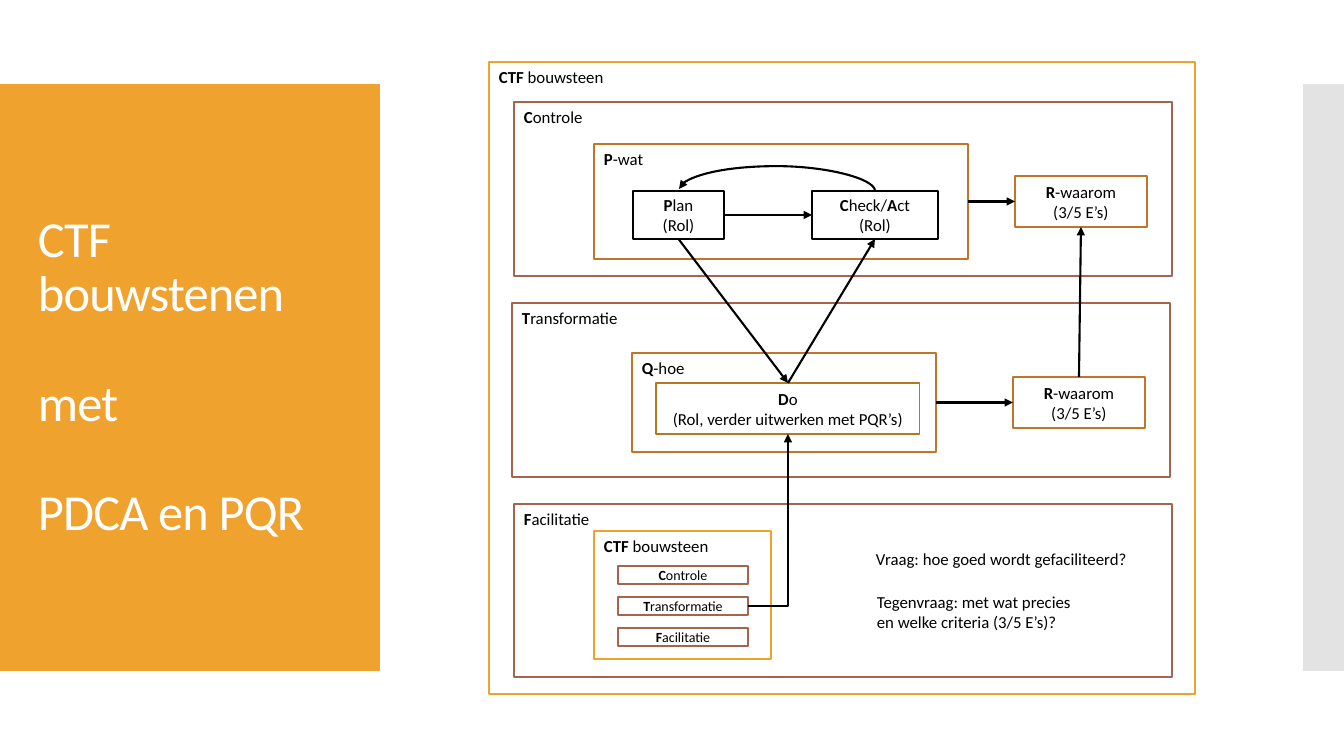
import pptx
import pptx.dml.color
import pptx.enum.shapes
import pptx.enum.text
import pptx.oxml
import pptx.oxml.ns
import pptx.util

PX = 914400 / 100.8
FONT = "Calibri"
COLORS = {
    "amber": "F0A22E", "copper": "C17529", "ochre": "B27822", "brick": "A5644E",
    "grey": "C8C8C8", "black": "000000", "white": "FFFFFF",
}
ALIGN = pptx.enum.text.PP_ALIGN
ANCHOR = pptx.enum.text.MSO_ANCHOR
CONNECTOR = pptx.enum.shapes.MSO_CONNECTOR
TOP, LEFT, BOTTOM, RIGHT = range(4)


def emu(*lengths):
    return [pptx.util.Emu(round(length * PX)) for length in lengths]


def color(name):
    return pptx.dml.color.RGBColor.from_string(COLORS[name])


def add_xml(parent, tag, **attributes):
    child = pptx.oxml.parse_xml(f"<a:{tag} {pptx.oxml.ns.nsdecls('a')}/>")
    for name, value in attributes.items():
        child.set(name, value)
    parent.append(child)


def write_text(shape, text, size=12, ink="black", align=ALIGN.LEFT, anchor=ANCHOR.TOP,
               line_spacing=None, gap=0, tracking=None):
    """Write one paragraph per line; parts between asterisks are bold."""
    frame = shape.text_frame
    frame.word_wrap = True
    frame.vertical_anchor = anchor
    for number, line in enumerate(text.split("\n")):
        para = frame.add_paragraph() if number else frame.paragraphs[0]
        para.alignment = align
        para.line_spacing = line_spacing
        para.space_before = pptx.util.Pt(gap if number else 0)
        for index, part in enumerate(line.split("*")):
            if not part:
                continue
            span = para.add_run()
            span.text = part
            span.font.name = FONT
            span.font.size = pptx.util.Pt(size)
            span.font.bold = index % 2 == 1
            span.font.color.rgb = color(ink)
            if tracking:
                span.font._element.set("spc", str(tracking))


def add_panel(page, box, fill):
    panel = page.shapes.add_shape(pptx.enum.shapes.MSO_SHAPE.RECTANGLE, *emu(*box))
    panel.shadow.inherit = False
    panel.fill.solid()
    panel.fill.fore_color.rgb = color(fill)
    panel.line.fill.background()
    return panel


def add_frame(page, box, text, line, weight=1.5, **text_format):
    frame = page.shapes.add_shape(pptx.enum.shapes.MSO_SHAPE.RECTANGLE, *emu(*box))
    frame.shadow.inherit = False
    frame.fill.background()
    frame.line.color.rgb = color(line)
    frame.line.width = pptx.util.Pt(weight)
    write_text(frame, text, **text_format)
    return frame


def add_step(page, box, text, line, **options):
    return add_frame(page, box, text, line, align=ALIGN.CENTER, anchor=ANCHOR.MIDDLE, **options)


def add_note(page, box, text, **text_format):
    note = page.shapes.add_textbox(*emu(*box))
    write_text(note, text, **text_format)


def add_arrow(page, kind=CONNECTOR.STRAIGHT, ends=(0, 0, 0, 0)):
    arrow = page.shapes.add_connector(kind, *emu(*ends))
    arrow.line.color.rgb = color("black")
    arrow.line.width = pptx.util.Pt(1.5)
    add_xml(arrow.line._get_or_add_ln(), "tailEnd", type="triangle")
    add_xml(arrow._element.spPr, "effectLst")
    return arrow


def join(page, start, start_side, end, end_side, kind=CONNECTOR.STRAIGHT):
    arrow = add_arrow(page, kind)
    arrow.begin_connect(start, start_side)
    arrow.end_connect(end, end_side)
    return arrow


def add_return_arc(page, center, middle, span, rise):
    """Draw an arrow arching from right to left, as a curve turned by 270 degrees."""
    half = span / 2
    arc = add_arrow(page, CONNECTOR.CURVE, (center - 1, middle + half, center + 1, middle - half))
    properties = arc._element.spPr
    properties.find(pptx.oxml.ns.qn("a:xfrm")).set("rot", str(270 * 60000))
    guides = properties.find(pptx.oxml.ns.qn("a:prstGeom")).get_or_add_avLst()
    add_xml(guides, "gd", name="adj1", fmla=f"val {(rise + 1) * 50000}")


def add_side_panels(page, box):
    left, top, width, height = box
    add_panel(page, (left, top, 380, height), "amber")
    strip = add_panel(page, (left + width - 41, top, 41, height), "grey")
    fill = strip._element.spPr.find(pptx.oxml.ns.qn("a:solidFill"))
    add_xml(fill[0], "alpha", val="50000")
    add_note(page, (left + 28, top + 40, 325, 507), "CTF bouwstenen\nmet\nPDCA en PQR",
             size=36, ink="white", anchor=ANCHOR.MIDDLE, line_spacing=0.9, gap=39, tracking=-60)


def add_reason(page, left, top):
    return add_step(page, (left, top, 132, 51), "*R*-waarom\n(3/5 E’s)", "copper")


def add_control(page, box):
    left, top = box[:2]
    add_frame(page, box, "*C*ontrole", "brick")
    what = add_frame(page, (left + 80, top + 42, 374, 115), "*P*-wat", "copper")
    plan = add_step(page, (left + 119, top + 89, 91, 48), "*P*lan\n(Rol)", "black")
    check = add_step(page, (left + 298, top + 89, 126, 48), "*C*heck/*A*ct\n(Rol)", "black")
    reason = add_reason(page, left + 501, top + 74)
    join(page, plan, RIGHT, check, LEFT)
    join(page, what, RIGHT, reason, LEFT)
    add_return_arc(page, left + 263, top + 88, span=196, rise=24)
    return plan, check, reason


def add_transformation(page, box):
    left, top = box[:2]
    add_frame(page, box, "*T*ransformatie", "brick")
    how = add_frame(page, (left + 120, top + 50, 304, 99), "*Q*-hoe", "copper")
    do = add_step(page, (left + 144, top + 80, 264, 51),
                  "*D*o\n(Rol, verder uitwerken met PQR’s)", "ochre", weight=0.85)
    reason = add_reason(page, left + 501, top + 74)
    join(page, how, RIGHT, reason, LEFT)
    return do, reason


def add_facilitation(page, box):
    left, top = box[:2]
    add_frame(page, box, "*F*acilitatie", "brick")
    add_frame(page, (left + 80, top + 27, 177, 128), "*CTF *bouwsteen", "amber")
    layers = [
        add_step(page, (left + 104, top + 62 + 31 * row, 130, 18), text, "brick", size=10)
        for row, text in enumerate(["*C*ontrole", "*T*ransformatie", "*F*acilitatie"])
    ]
    add_note(page, (left + 352, top + 40, 278, 50), "Vraag: hoe goed wordt gefaciliteerd?")
    add_note(page, (left + 353, top + 83, 224, 50),
             "Tegenvraag: met wat precies en welke criteria (3/5 E’s)?")
    return layers[1]


def add_building_block(page, box):
    left, top = box[:2]
    add_frame(page, box, "*CTF *bouwsteen", "amber")
    plan, check, control_reason = add_control(page, (left + 25, top + 40, 658, 174))
    do, reason = add_transformation(page, (left + 23, top + 241, 658, 174))
    layer = add_facilitation(page, (left + 25, top + 442, 658, 173))
    join(page, plan, BOTTOM, do, TOP)
    join(page, do, TOP, check, BOTTOM)
    join(page, reason, TOP, control_reason, BOTTOM)
    supply = join(page, layer, RIGHT, do, BOTTOM, CONNECTOR.ELBOW)
    supply._element.spPr.find(pptx.oxml.ns.qn("a:prstGeom")).set("prst", "bentConnector2")


def main():
    deck = pptx.Presentation()
    deck.slide_width, deck.slide_height = emu(1344, 756)
    page = deck.slides.add_slide(deck.slide_layouts[6])
    add_side_panels(page, (0, 84, 1344, 587))
    add_building_block(page, (489, 62, 706, 632))
    deck.save("out.pptx")


if __name__ == "__main__":
    main()
